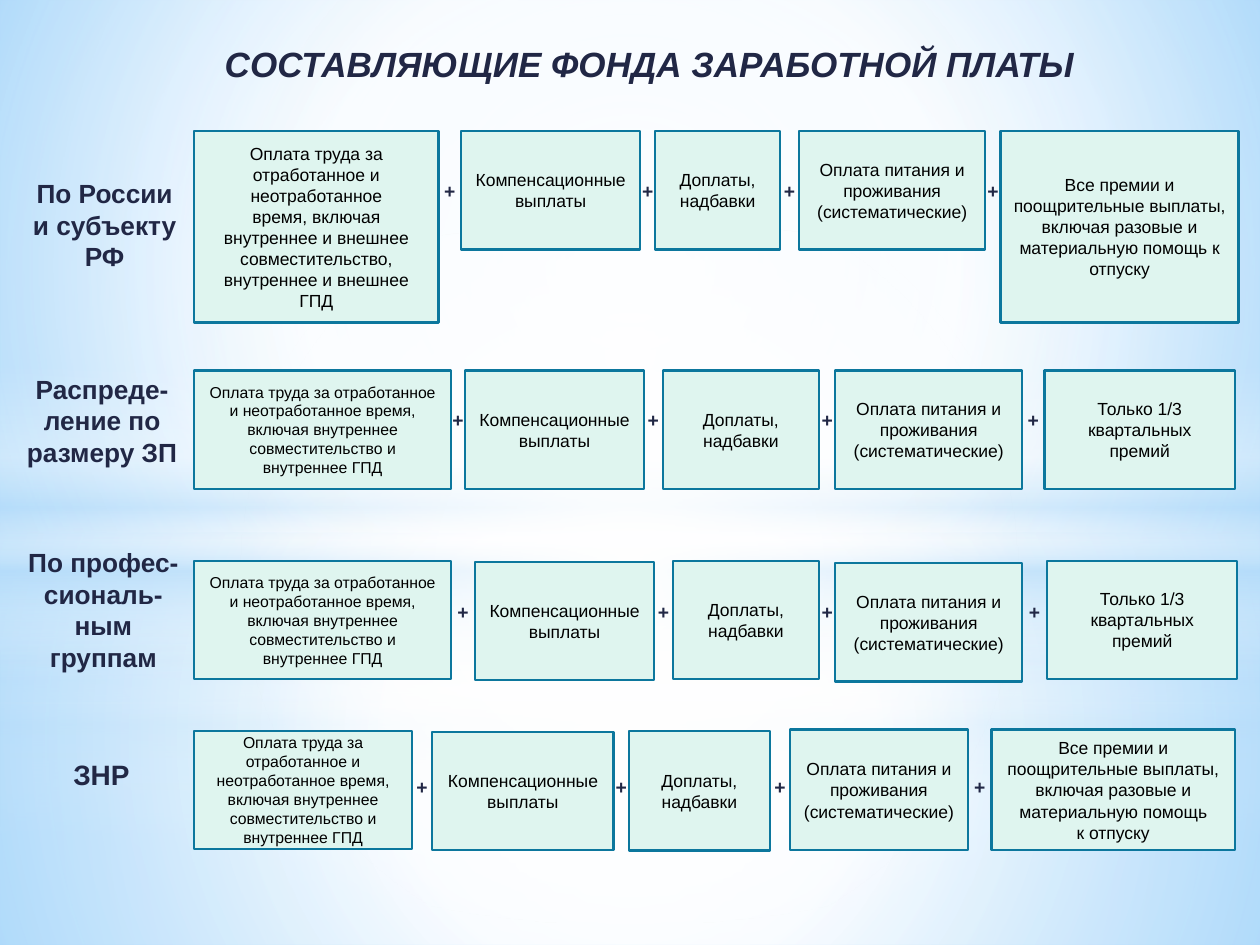
from lxml import etree
from pptx import Presentation
from pptx.dml.color import RGBColor
from pptx.enum.shapes import MSO_SHAPE
from pptx.enum.text import MSO_ANCHOR, PP_ALIGN
from pptx.oxml.ns import nsdecls, qn
from pptx.util import Inches, Pt

RECTANGLE = MSO_SHAPE.RECTANGLE
OVAL = MSO_SHAPE.OVAL
TOP = MSO_ANCHOR.TOP
MIDDLE = MSO_ANCHOR.MIDDLE
CENTER = PP_ALIGN.CENTER

NAVY = RGBColor(0x21, 0x27, 0x45)
BLACK = RGBColor(0x00, 0x00, 0x00)
MINT = RGBColor(0xDF, 0xF5, 0xEF)
TEAL = RGBColor(0x0C, 0x77, 0x9D)
WHITE = RGBColor(0xFF, 0xFF, 0xFF)
PALE_BLUE = RGBColor(0xB4, 0xDC, 0xFA)
SKY = RGBColor(0x9E, 0xD5, 0xFF)
BRIGHT_BLUE = RGBColor(0x5B, 0xB9, 0xFF)

PLUS_WIDTH = 0.15
PLUS_HEIGHT = 0.21

PAY = ("Оплата труда за отработанное и неотработанное время, включая внутреннее "
       "совместительство и внутреннее ГПД")
PAY_FULL = ("Оплата труда за отработанное и неотработанное\nвремя, включая внутреннее и внешнее "
            "совместительство, внутреннее и внешнее ГПД")
COMMON = ["Компенсационные выплаты", "Доплаты, надбавки",
          "Оплата питания и проживания (систематические)"]
BONUS = "Все премии и поощрительные выплаты, включая разовые и материальную помощь"
THIRD = "Только 1/3 квартальных премий"

ROWS = [
    {"label": "По России и субъекту РФ", "label_box": (0.12, 1.36, 1.42, 0.89), "label_size": 15,
     "first": PAY_FULL, "first_size": 10, "last": BONUS + " к отпуску", "plus_top": 1.41,
     "boxes": [(1.54, 1.04, 1.94, 1.52), (3.66, 1.04, 1.42, 0.94), (5.2, 1.04, 0.99, 0.94),
               (6.34, 1.04, 1.48, 0.94), (7.94, 1.04, 1.89, 1.52)]},
    {"label": "Распреде-ление по размеру ЗП", "label_box": (0.1, 2.91, 1.42, 0.88), "label_size": 15,
     "first": PAY, "first_size": 9, "last": THIRD, "plus_top": 3.23,
     "boxes": [(1.54, 2.94, 2.04, 0.94), (3.69, 2.94, 1.42, 0.94), (5.26, 2.94, 1.24, 0.94),
               (6.63, 2.94, 1.48, 0.94), (8.29, 2.94, 1.51, 0.94)]},
    {"label": "По профес-сиональ-ным группам", "label_box": (0.11, 4.29, 1.42, 1.13), "label_size": 15,
     "first": PAY, "first_size": 9, "last": THIRD, "plus_top": 4.75,
     "boxes": [(1.54, 4.45, 2.04, 0.94), (3.77, 4.46, 1.42, 0.94), (5.34, 4.45, 1.16, 0.94),
               (6.63, 4.47, 1.48, 0.94), (8.31, 4.45, 1.51, 0.94)]},
    {"label": "ЗНР", "label_box": (0.23, 5.96, 1.15, 0.48), "label_size": 16,
     "first": PAY, "first_size": 9, "last": BONUS + "\nк отпуску", "plus_top": 6.14,
     "boxes": [(1.54, 5.8, 1.73, 0.94), (3.43, 5.81, 1.44, 0.94), (4.99, 5.8, 1.12, 0.95),
               (6.27, 5.79, 1.41, 0.96), (7.87, 5.79, 1.93, 0.96)]},
]

BAND = [(0, WHITE, 0), (29, WHITE, 30), (45, PALE_BLUE, 40), (55, WHITE, 26),
        (65, PALE_BLUE, 60), (100, WHITE, 0)]


def radial(left, top, right, bottom):
    return (f'<a:path path="circle"><a:fillToRect l="{left * 1000}" t="{top * 1000}" '
            f'r="{right * 1000}" b="{bottom * 1000}"/></a:path>')


CENTERED = radial(50, 50, 50, 50)
VERTICAL = '<a:lin ang="5400000" scaled="0"/>'


def glow(middle, first_alpha, middle_alpha, last_alpha):
    return [(0, WHITE, first_alpha), (middle, WHITE, middle_alpha), (100, PALE_BLUE, last_alpha)]


def halo(end):
    return [(0, WHITE, 100), (end, WHITE, 0)]


class SlideBuilder:
    font = "Arial"

    def __init__(self, slide):
        self.slide = slide

    def gradient(self, stops, direction):
        stop_xml = "".join(
            f'<a:gs pos="{position * 1000}"><a:srgbClr val="{color}">'
            f'<a:alpha val="{alpha * 1000}"/></a:srgbClr></a:gs>'
            for position, color, alpha in stops)
        return etree.fromstring(f'<a:gradFill {nsdecls("a")} rotWithShape="1">'
                                f'<a:gsLst>{stop_xml}</a:gsLst>{direction}</a:gradFill>')

    def replace_fill(self, fill, element, stops, direction):
        fill.solid()
        solid = next(element.iter(qn("a:solidFill")))
        solid.getparent().replace(solid, self.gradient(stops, direction))

    def background(self, stops, direction):
        self.replace_fill(self.slide.background.fill, self.slide.element, stops, direction)

    def shape(self, kind, bounds):
        shape = self.slide.shapes.add_shape(kind, *map(Inches, bounds))
        shape.shadow.inherit = False
        return shape

    def overlay(self, kind, bounds, stops, direction):
        shape = self.shape(kind, bounds)
        shape.line.fill.background()
        self.replace_fill(shape.fill, shape.element.spPr, stops, direction)

    def add_text(self, frame, text, size, color, anchor, bold=False, italic=False):
        frame.word_wrap = True
        frame.vertical_anchor = anchor
        paragraph = frame.paragraphs[0]
        paragraph.alignment = CENTER
        for index, line in enumerate(text.split("\n")):
            if index:
                paragraph.add_line_break()
            run = paragraph.add_run()
            run.text = line
            run.font.name = self.font
            run.font.size = Pt(size)
            run.font.bold = bold
            run.font.italic = italic
            run.font.color.rgb = color
        return paragraph

    def box(self, bounds, text, size):
        shape = self.shape(RECTANGLE, bounds)
        shape.fill.solid()
        shape.fill.fore_color.rgb = MINT
        shape.line.color.rgb = TEAL
        shape.line.width = Pt(1.25)
        self.add_text(shape.text_frame, text, size, BLACK, MIDDLE)

    def heading(self, bounds, text, size, anchor=TOP, italic=False):
        frame = self.slide.shapes.add_textbox(*map(Inches, bounds)).text_frame
        paragraph = self.add_text(frame, text, size, NAVY, anchor, True, italic)
        paragraph.space_before = Pt(size * 0.2)
        paragraph.space_after = Pt(3)
        return frame

    def plus(self, center, top):
        bounds = (center - PLUS_WIDTH / 2, top, PLUS_WIDTH, PLUS_HEIGHT)
        frame = self.heading(bounds, "+", 11, MIDDLE)
        frame.margin_left = frame.margin_right = 0
        frame.margin_top = frame.margin_bottom = 0

    def row(self, row):
        self.heading(row["label_box"], row["label"], row["label_size"])
        boxes = row["boxes"]
        texts = [row["first"], *COMMON, row["last"]]
        sizes = [row["first_size"], 10, 10, 10, 10]
        for bounds, text, size in zip(boxes, texts, sizes):
            self.box(bounds, text, size)
        for before, after in zip(boxes, boxes[1:]):
            self.plus((before[0] + before[2] + after[0]) / 2, row["plus_top"])


def main():
    presentation = Presentation()
    presentation.slide_width = Inches(10)
    presentation.slide_height = Inches(7.5)
    builder = SlideBuilder(presentation.slides.add_slide(presentation.slide_layouts[6]))

    builder.background([(0, SKY, 100), (60, WHITE, 100), (100, BRIGHT_BLUE, 100)],
                       radial(20, 10, 20, 60))
    for split, band_top, halo_end, lower, upper in [
        (5.58, 4.12, 56, (37, 91, 76, 79), (48, 89, 62, 79)),
        (4.23, 2.9, 54, (37, 92, 77, 80), (48, 90, 63, 80)),
    ]:
        builder.overlay(RECTANGLE, (0, split, 10, 7.5 - split), glow(*lower), CENTERED)
        builder.overlay(RECTANGLE, (0, 0, 10, split), glow(*upper), CENTERED)
        builder.overlay(RECTANGLE, (0, band_top, 10, 2.5), BAND, VERTICAL)
        builder.overlay(OVAL, (0, 1.75, 10, 5.58), halo(halo_end), CENTERED)

    builder.heading((0.39, 0.29, 9.53, 0.55), "СОСТАВЛЯЮЩИЕ ФОНДА ЗАРАБОТНОЙ ПЛАТЫ", 20, italic=True)
    for row in ROWS:
        builder.row(row)
    presentation.save("out.pptx")


if __name__ == "__main__":
    main()
